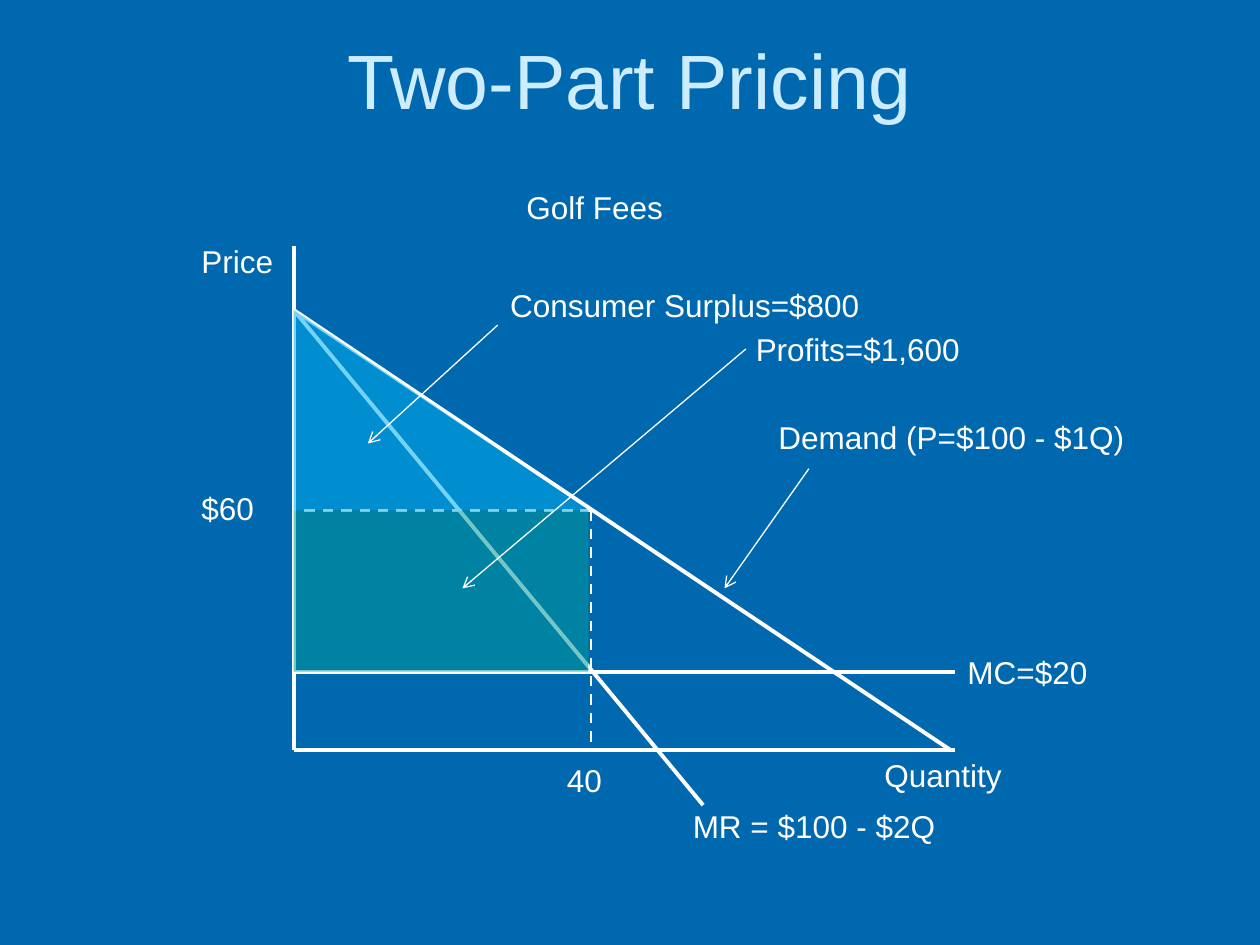
from lxml import etree
from pptx import Presentation
from pptx.dml.color import RGBColor
from pptx.enum.dml import MSO_LINE
from pptx.enum.shapes import MSO_CONNECTOR, MSO_SHAPE
from pptx.enum.text import MSO_ANCHOR, MSO_AUTO_SIZE, PP_ALIGN
from pptx.oxml.ns import qn
from pptx.util import Inches, Pt

COLORS = {
    "background": "0068AE",
    "title": "CCECFF",
    "ink": "FFFFFF",
    "profit": "009999",
    "surplus": "00B0F0",
}
FONT = "Arial"
TITLE = "Two-Part Pricing"

# Key positions on the graph, in inches
AXIS_X, AXIS_Y, AXIS_END = 2.33, 5.95, 7.58
QUANTITY_X, PRICE_Y, COST_Y = 4.69, 4.05, 5.33
CHOKE_Y = 2.46
AREA_WIDTH = 2.34

# Text, left, top, width
LABELS = [
    ("Price", 1.5, 1.87, 1.08),
    ("Quantity", 6.92, 5.95, 1.25),
    ("Demand (P=$100 - $1Q)", 6.08, 3.27, 3.08),
    ("MR = $100 - $2Q", 5.4, 6.36, 2.19),
    ("$60", 1.5, 3.83, 0.75),
    ("Golf Fees", 4.08, 1.44, 1.83),
    ("40", 4.4, 5.99, 0.61),
    ("MC=$20", AXIS_END, 5.13, 1.25),
    ("Profits=$1,600", 5.9, 2.57, 2.27),
    ("Consumer Surplus=$800", 3.95, 2.22, 3.39),
]
# Start, end
CURVES = [
    ((AXIS_X, 1.95), (AXIS_X, AXIS_Y)),  # price axis
    ((AXIS_END, AXIS_Y), (AXIS_X, AXIS_Y)),  # quantity axis
    ((AXIS_X, CHOKE_Y), (7.54, AXIS_Y)),  # demand
    ((5.58, 6.39), (AXIS_X, CHOKE_Y)),  # marginal revenue
    ((AXIS_END, COST_Y), (AXIS_X, COST_Y)),  # marginal cost
]
GUIDES = [
    ((QUANTITY_X, PRICE_Y), (AXIS_X, PRICE_Y)),
    ((QUANTITY_X, PRICE_Y), (QUANTITY_X, AXIS_Y)),
]
POINTERS = [
    ((6.42, 3.72), (5.75, 4.67)),  # demand
    ((5.92, 2.77), (3.67, 4.67)),  # profits
    ((3.95, 2.58), (2.92, 3.52)),  # consumer surplus
]
# Preset, colour, top, bottom
AREAS = [
    (MSO_SHAPE.RECTANGLE, "profit", PRICE_Y, COST_Y),
    (MSO_SHAPE.RIGHT_TRIANGLE, "surplus", CHOKE_Y, PRICE_Y),
]


def rgb(name):
    return RGBColor.from_string(COLORS[name])


def write(frame, text, size, color):
    para = frame.paragraphs[0]
    span = para.add_run()
    span.text = text
    for key, value in {"name": FONT, "size": Pt(size)}.items():
        setattr(span.font, key, value)
    span.font.color.rgb = rgb(color)
    return para


def add_line(page, start, end, width, dash=None, arrow=False):
    points = [Inches(value) for value in (*start, *end)]
    line = page.shapes.add_connector(MSO_CONNECTOR.STRAIGHT, *points)
    line.line.color.rgb = rgb("ink")
    line.line.width = Pt(width)
    if dash:
        line.line.dash_style = dash
    if arrow:
        etree.SubElement(line.line._get_or_add_ln(), qn("a:tailEnd"), type="arrow")
    etree.SubElement(line._element.spPr, qn("a:effectLst"))


def add_area(page, preset, color, top, bottom):
    """Shade a region beside the price axis with a translucent fill."""
    place = (AXIS_X, top, AREA_WIDTH, bottom - top)
    area = page.shapes.add_shape(preset, *map(Inches, place))
    area.shadow.inherit = False
    area.fill.solid()
    area.fill.fore_color.rgb = rgb(color)
    area.line.fill.background()
    tint = area._element.spPr.find(qn("a:solidFill"))[0]
    etree.SubElement(tint, qn("a:alpha"), val="54000")


def add_label(page, text, left, top, width):
    box = page.shapes.add_textbox(*map(Inches, (left, top, width, 0.4)))
    box.text_frame.word_wrap = True
    box.text_frame.auto_size = MSO_AUTO_SIZE.SHAPE_TO_FIT_TEXT
    write(box.text_frame, text, 18, "ink")


def add_title(page):
    title = page.shapes.title
    place = {"left": 0.5, "top": 0, "width": 9, "height": 1.25}
    for key, value in place.items():
        setattr(title, key, Inches(value))
    frame = title.text_frame
    frame.auto_size = MSO_AUTO_SIZE.NONE
    frame.vertical_anchor = MSO_ANCHOR.MIDDLE
    write(frame, TITLE, 44, "title").alignment = PP_ALIGN.CENTER


def main():
    deck = Presentation()
    deck.slide_width, deck.slide_height = Inches(10), Inches(7.5)
    page = deck.slides.add_slide(deck.slide_layouts.get_by_name("Title Only"))
    page.background.fill.solid()
    page.background.fill.fore_color.rgb = rgb("background")

    add_title(page)
    for start, end in CURVES:
        add_line(page, start, end, 2.25)
    for start, end in GUIDES:
        add_line(page, start, end, 1.5, dash=MSO_LINE.DASH)
    for area in AREAS:
        add_area(page, *area)
    for start, end in POINTERS:
        add_line(page, start, end, 0.75, arrow=True)
    for label in LABELS:
        add_label(page, *label)
    deck.save("out.pptx")


if __name__ == "__main__":
    main()
